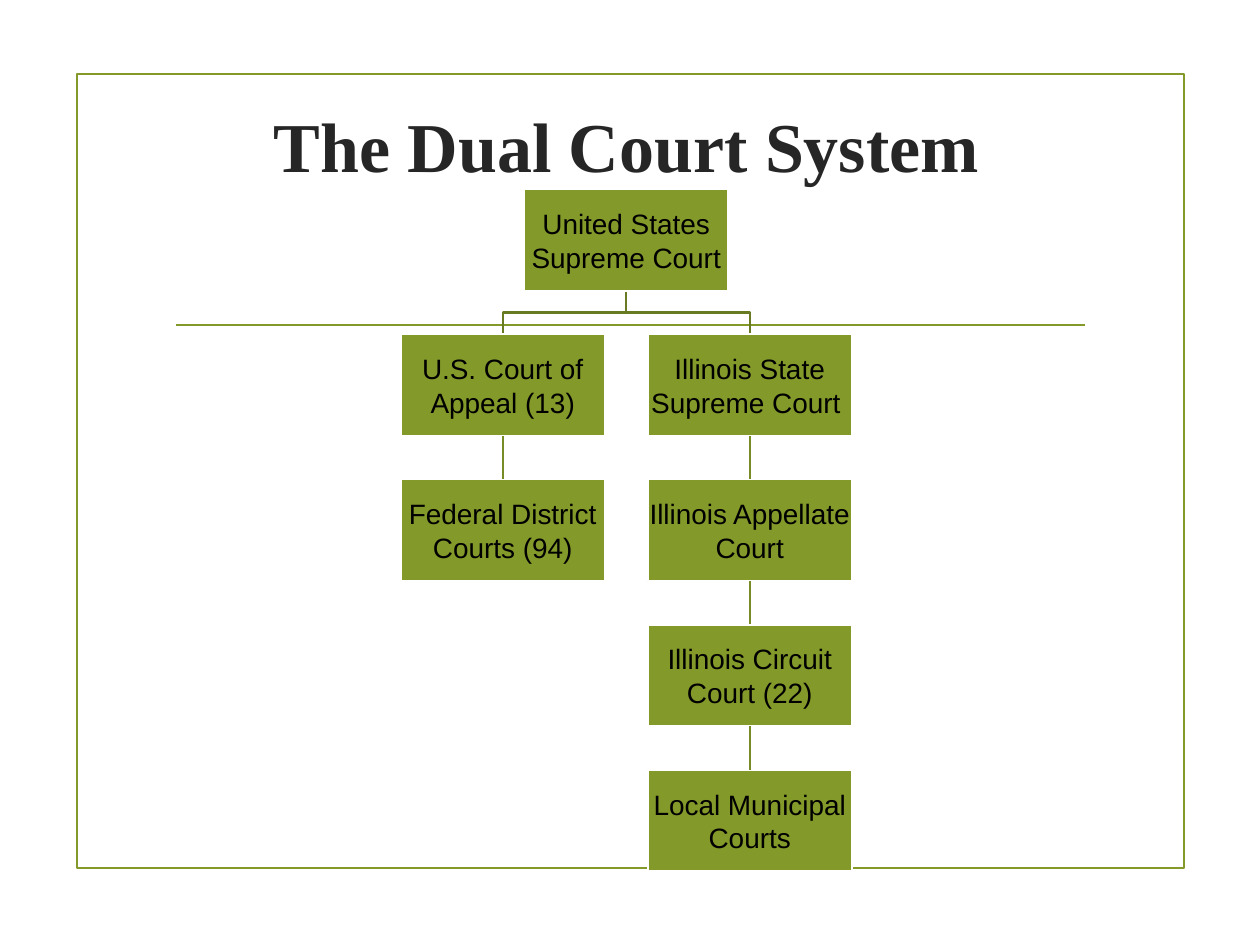
from dataclasses import dataclass

from lxml import etree
from pptx import Presentation
from pptx.dml.color import RGBColor
from pptx.enum.shapes import MSO_CONNECTOR, MSO_SHAPE
from pptx.enum.text import MSO_ANCHOR, PP_ALIGN
from pptx.oxml.ns import qn
from pptx.util import Inches, Pt

RECTANGLE = MSO_SHAPE.RECTANGLE
STRAIGHT = MSO_CONNECTOR.STRAIGHT
MIDDLE = MSO_ANCHOR.MIDDLE
CENTER = PP_ALIGN.CENTER
TOP_SIDE, BOTTOM_SIDE = 0, 2

GREEN, WHITE, BLACK, CHARCOAL = "83992A", "FFFFFF", "000000", "262626"
UPPER_LINK, LOWER_LINK = "697B22", "778B26"
LINE_WIDTH = 1.25

# Chart grid in inches: columns count from the centre, rows from the top
CENTER_X, COLUMN_STEP = 4.97, 0.98
FIRST_TOP, ROW_STEP = 1.5, 1.152
BOX_WIDTH, BOX_HEIGHT = 1.62, 0.81


@dataclass(frozen=True)
class Court:
    name: str
    column: int
    row: int

    @property
    def center_x(self) -> float:
        return CENTER_X + self.column * COLUMN_STEP

    @property
    def top(self) -> float:
        return FIRST_TOP + self.row * ROW_STEP

    @property
    def bottom(self) -> float:
        return self.top + BOX_HEIGHT


SUPREME = Court("United States Supreme Court", 0, 0)
FEDERAL = [
    Court("U.S. Court of Appeal (13)", -1, 1),
    Court("Federal District Courts (94)", -1, 2),
]
STATE = [
    Court("Illinois State Supreme Court ", 1, 1),
    Court("Illinois Appellate Court", 1, 2),
    Court("Illinois Circuit Court (22)", 1, 3),
    Court("Local Municipal Courts", 1, 4),
]


def color(value: str) -> RGBColor:
    return RGBColor.from_string(value)


def set_line(shape, value: str) -> None:
    shape.line.color.rgb = color(value)
    shape.line.width = Pt(LINE_WIDTH)


def write(shape, text: str, *, font: str, size: float, ink: str,
          bold: bool = False, inset: float = 0.1) -> None:
    frame = shape.text_frame
    frame.word_wrap = True
    frame.vertical_anchor = MIDDLE
    frame.margin_left = frame.margin_right = Inches(inset)
    frame.margin_top = frame.margin_bottom = Inches(min(inset, 0.05))
    para = frame.paragraphs[0]
    para.alignment = CENTER
    span = para.add_run()
    span.text = text
    span.font.name, span.font.size, span.font.bold = font, Pt(size), bold
    span.font.color.rgb = color(ink)


def add_rectangle(page, left: float, top: float, width: float, height: float,
                  line: str, fill: str | None = None):
    box = page.shapes.add_shape(RECTANGLE, Inches(left), Inches(top),
                                Inches(width), Inches(height))
    box.shadow.inherit = False
    if fill:
        box.fill.solid()
        box.fill.fore_color.rgb = color(fill)
    else:
        box.fill.background()
    set_line(box, line)
    return box


def add_court(page, court: Court):
    box = add_rectangle(page, court.center_x - BOX_WIDTH / 2, court.top,
                        BOX_WIDTH, BOX_HEIGHT, line=WHITE, fill=GREEN)
    write(box, court.name, font="Arial", size=16, ink=BLACK, inset=0.01)
    return box


def add_line(page, start: tuple[float, float], end: tuple[float, float], value: str):
    points = [Inches(number) for number in (*start, *end)]
    line = page.shapes.add_connector(STRAIGHT, *points)
    set_line(line, value)
    etree.SubElement(line._element.spPr, qn("a:effectLst"))
    return line


def add_branch(page, parent: Court, child: Court) -> None:
    middle = (parent.bottom + child.top) / 2
    corners = [(parent.center_x, middle), (child.center_x, middle),
               (child.center_x, child.top)]
    builder = page.shapes.build_freeform(Inches(parent.center_x), Inches(parent.bottom))
    builder.add_line_segments([(Inches(x), Inches(y)) for x, y in corners], close=False)
    branch = builder.convert_to_shape()
    branch.shadow.inherit = False
    branch.fill.background()
    set_line(branch, UPPER_LINK)


def add_chain(page, courts: list[Court]) -> None:
    add_branch(page, SUPREME, courts[0])
    boxes = [add_court(page, court) for court in courts]
    for index in range(len(courts) - 1):
        upper, lower = courts[index:index + 2]
        link = add_line(page, (upper.center_x, upper.bottom),
                        (lower.center_x, lower.top), LOWER_LINK)
        link.begin_connect(boxes[index], BOTTOM_SIDE)
        link.end_connect(boxes[index + 1], TOP_SIDE)


def main() -> None:
    deck = Presentation()
    deck.slide_width, deck.slide_height = Inches(10), Inches(7.5)
    page = deck.slides.add_slide(deck.slide_layouts[5])

    # Border and rule
    add_rectangle(page, 0.61, 0.59, 8.79, 6.3, line=GREEN)
    add_line(page, (1.4, 2.58), (8.61, 2.58), GREEN)

    # Title
    title = page.shapes.title
    title.left, title.top = Inches(1.25), Inches(0.43)
    title.width, title.height = Inches(7.44), Inches(1.43)
    write(title, "The Dual Court System", font="Times New Roman", size=40,
          ink=CHARCOAL, bold=True)

    # Court hierarchy
    for courts in (STATE, FEDERAL):
        add_chain(page, courts)
    add_court(page, SUPREME)

    deck.save("out.pptx")


if __name__ == "__main__":
    main()
